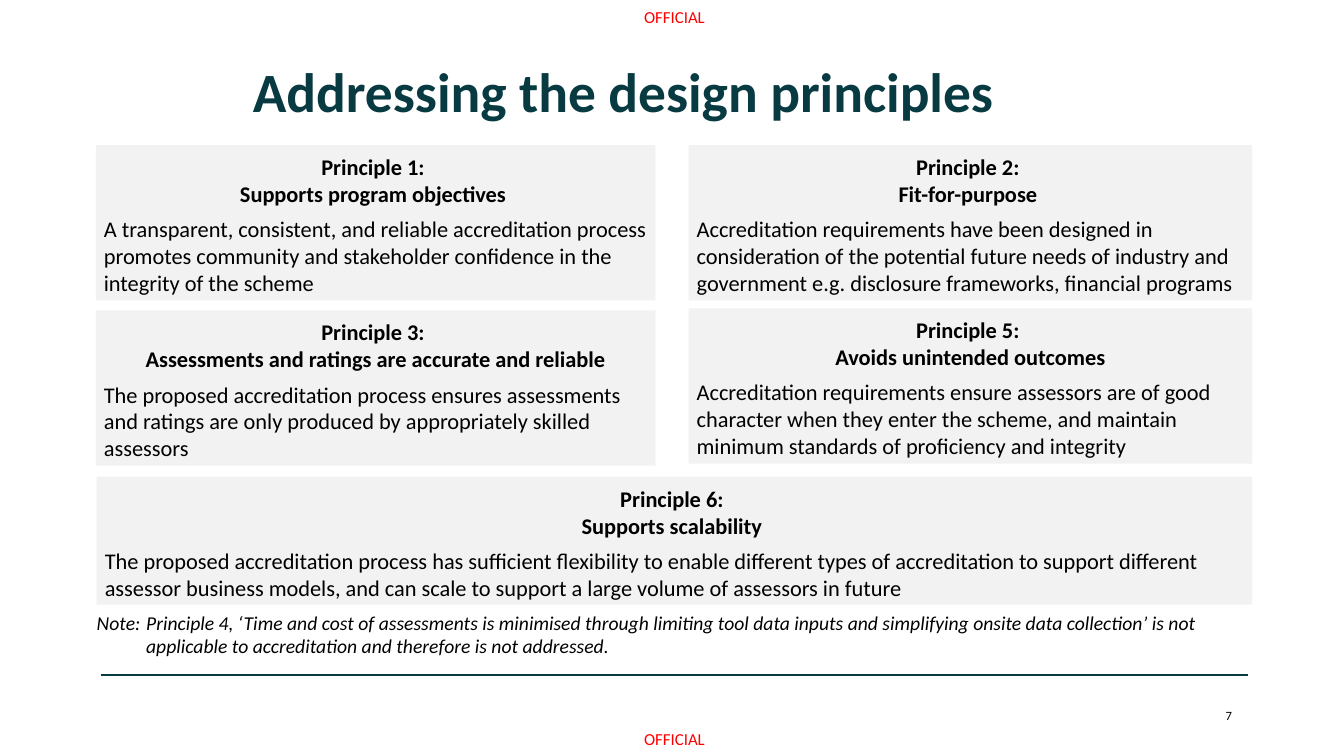
from lxml.etree import SubElement
from pptx import Presentation
from pptx.dml.color import RGBColor as RGB
from pptx.enum.shapes import MSO_CONNECTOR as LINE, MSO_SHAPE as SHAPE
from pptx.enum.text import MSO_ANCHOR as ANCHOR, PP_ALIGN as ALIGN
from pptx.oxml.ns import qn
from pptx.util import Inches, Pt

HUES = {"teal": "083A42", "red": "FF0000", "black": "000000", "panel": "F2F2F2"}
TITLE = "Addressing the design principles"
MARK = "OFFICIAL"
PAGE = "7"
NOTE = (
    "Note: \tPrinciple 4, ‘Time and cost of assessments is minimised through limiting "
    "tool data inputs and simplifying onsite data collection’ is not applicable to "
    "accreditation and therefore is not addressed."
)
CARDS = [
    ((0.95, 1.44, 5.55, 1.54), "Principle 1: ", "Supports program objectives ",
     "A transparent, consistent, and reliable accreditation process promotes community "
     "and stakeholder confidence in the integrity of the scheme"),
    ((6.83, 1.44, 5.59, 1.54), "Principle 2: ", "Fit-for-purpose ",
     "Accreditation requirements have been designed in consideration of the potential "
     "future needs of industry and government e.g. disclosure frameworks, financial programs"),
    ((0.95, 3.08, 5.55, 1.54), "Principle 3: ", "Assessments and ratings are accurate and reliable",
     "The proposed accreditation process ensures assessments and ratings are only "
     "produced by appropriately skilled assessors"),
    ((6.83, 3.06, 5.59, 1.54), "Principle 5: ", "Avoids unintended outcomes",
     "Accreditation requirements ensure assessors are of good character when they enter "
     "the scheme, and maintain minimum standards of proficiency and integrity"),
    ((0.96, 4.73, 11.46, 1.27), "Principle 6: ", "Supports scalability ",
     "The proposed accreditation process has sufficient flexibility to enable different "
     "types of accreditation to support different assessor business models, and can scale "
     "to support a large volume of assessors in future"),
]
HEAD = {"alignment": ALIGN.CENTER}
BODY = {"alignment": ALIGN.LEFT, "space_before": Pt(6), "space_after": Pt(6)}


def apply(item, form):
    """Set every attribute named in a format dict."""
    for key, value in form.items():
        setattr(item, key, value)


def write(para, text, size, hue="black", form=HEAD, **font):
    """Fill one paragraph with a formatted run."""
    apply(para, form)
    run = para.add_run()
    run.text = text
    apply(run.font, {"name": "Calibri", "size": Pt(size), **font})
    run.font.color.rgb = RGB.from_string(HUES[hue])


def setup(frame, pad=0, anchor=ANCHOR.TOP):
    """Set wrapping, anchor and margins of a text frame."""
    sides = ("left", "right", "top", "bottom")
    apply(frame, {f"margin_{side}": Inches(pad) for side in sides})
    apply(frame, {"word_wrap": True, "vertical_anchor": anchor})
    return frame


def label(slide, place, text, *style, pad=0, anchor=ANCHOR.TOP, **font):
    """Add a one-paragraph text box and return its paragraph."""
    box = slide.shapes.add_textbox(*map(Inches, place))
    para = setup(box.text_frame, pad, anchor).paragraphs[0]
    write(para, text, *style, **font)
    return para


def card(slide, place, name, topic, text):
    """Add one principle panel."""
    box = slide.shapes.add_shape(SHAPE.RECTANGLE, *map(Inches, place))
    box.shadow.inherit = False
    box.fill.solid()
    box.fill.fore_color.rgb = RGB.from_string(HUES["panel"])
    box.line.fill.background()
    frame = setup(box.text_frame, 0.08)
    write(frame.paragraphs[0], name, 16, bold=True)
    write(frame.add_paragraph(), topic, 16, bold=True)
    write(frame.add_paragraph(), text, 16, form=BODY)


def rule(slide, left, right, top):
    """Add the footer line."""
    line = slide.shapes.add_connector(LINE.STRAIGHT, *map(Inches, (left, top, right, top)))
    line.line.color.rgb = RGB.from_string(HUES["teal"])
    line.line.width = Pt(1.5)
    SubElement(line._element.spPr, qn("a:effectLst"))


def main():
    """Build and save the slide."""
    deck = Presentation()
    apply(deck, {"slide_width": Inches(13.33), "slide_height": Inches(7.5)})
    slide = deck.slides.add_slide(deck.slide_layouts[6])
    for top in (0.07, 7.23):
        label(slide, (6.37, top, 0.64, 0.2), MARK, 12, "red")
    rule(slide, 1, 12.38, 6.7)
    label(slide, (2.41, 0.57, 8.62, 0.73), TITLE, 39.6, "teal",
          {"alignment": ALIGN.LEFT, "line_spacing": 0.9},
          pad=0.1, anchor=ANCHOR.MIDDLE, bold=True)
    for item in CARDS:
        card(slide, *item)
    note = label(slide, (0.96, 6.06, 11.46, 0.47), NOTE, 14, "black", BODY, italic=True)
    props = note._p.get_or_add_pPr()
    for key, inch in {"marL": 0.49, "indent": -0.49}.items():
        props.set(key, str(Inches(inch)))
    label(slide, (11.04, 7.02, 1.18, 0.15), PAGE, 9, "black", {"alignment": ALIGN.RIGHT})
    deck.save("out.pptx")


if __name__ == "__main__":
    main()
